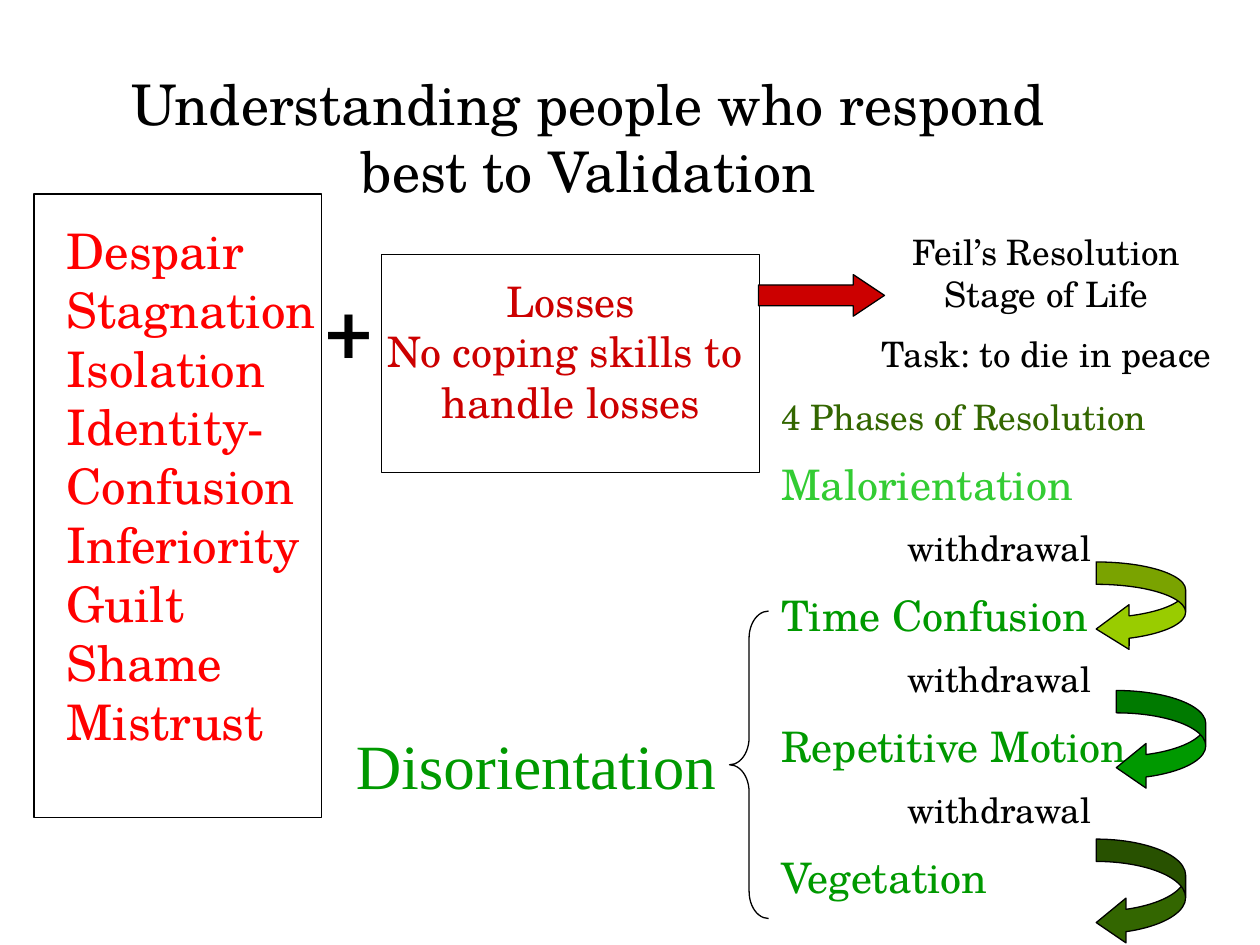
from pptx import Presentation
from pptx.dml.color import RGBColor
from pptx.enum.shapes import MSO_SHAPE as Shape
from pptx.enum.text import MSO_ANCHOR as Anchor, PP_ALIGN as Align
from pptx.util import Emu, Pt

SCALE = 9144
SERIF = "TeX Gyre Schola"
BLACK, RED, CRIMSON = "000000", "FF0000", "CC0000"
LIME, GREEN, OLIVE = "33CC33", "009900", "336600"


def px(length):
    """Turn px, at 100 to the inch, into EMU."""
    return Emu(length * SCALE)


def color(hex_value):
    """Return the colour for a hex string."""
    return RGBColor.from_string(hex_value)


def write(frame, lines, size=20, fill=BLACK, font=SERIF, align=Align.LEFT,
          anchor=Anchor.TOP, wrap=True, spaced=False):
    """Fill a text frame; a line is text or (text, size, colour, indent)."""
    frame.word_wrap, frame.vertical_anchor = wrap, anchor
    for index, line in enumerate(lines):
        text, points, shade, indent = (
            (line, size, fill, 0) if isinstance(line, str) else line)
        paragraph = frame.paragraphs[0] if index == 0 else frame.add_paragraph()
        properties = paragraph._p.get_or_add_pPr()
        properties.set("marL", str(px(indent)))
        properties.set("indent", "0")
        paragraph.alignment = align
        paragraph.space_before = Pt(points / 2 if spaced and index else 0)
        run = paragraph.add_run()
        run.text = text
        run.font.size, run.font.name = Pt(points), font
        run.font.color.rgb = color(shade)


def add_text(slide, box, lines, **format):
    """Add a text box."""
    write(slide.shapes.add_textbox(*map(px, box)).text_frame, lines, **format)


def add_outline(slide, kind, box, fill=None, adjustments=()):
    """Add a thin black-lined preset shape."""
    shape = slide.shapes.add_shape(kind, *map(px, box))
    shape.shadow.inherit = False
    shape.line.color.rgb, shape.line.width = color(BLACK), Pt(0.75)
    if fill:
        shape.fill.solid()
        shape.fill.fore_color.rgb = color(fill)
    else:
        shape.fill.background()
    for index, value in enumerate(adjustments):
        shape.adjustments[index] = value
    return shape


def add_title(slide, box):
    """Place and format the title."""
    title = slide.shapes.title
    title.left, title.top, title.width, title.height = map(px, box)
    write(title.text_frame, ["Understanding people who respond best to Validation"],
          size=32, align=Align.CENTER)


def add_failures(slide, box):
    """Add the framed list of unresolved life tasks."""
    left, top, width, height = box
    failures = ["Despair", "Stagnation", "Isolation", "Identity- Confusion",
                "Inferiority", "Guilt", "Shame", "Mistrust"]
    add_text(slide, (left + 16, top + 16, 220, 434), failures, size=28, fill=RED)
    add_outline(slide, Shape.RECTANGLE, box)


def add_losses(slide, box):
    """Add the losses box with the plus before it and the arrow after it."""
    left, top, width, height = box
    losses = add_outline(slide, Shape.RECTANGLE, box)
    losses.text_frame.margin_bottom = px(25)
    write(losses.text_frame, ["Losses", "No coping skills to ", "handle losses"],
          size=24, fill=CRIMSON, align=Align.CENTER, anchor=Anchor.MIDDLE, wrap=False)
    add_text(slide, (left - 55, top + 16, 58, 90), ["+"], size=48,
             font="Roboto Slab", align=Align.CENTER)
    add_outline(slide, Shape.RIGHT_ARROW, (left + width - 1, top + 16, 100, 33),
                CRIMSON, (0.5, 0.75))


def add_resolution(slide, box):
    """Add the stage of life and its task."""
    add_text(slide, box, ["Feil’s Resolution Stage of Life", "Task: to die in peace"],
             align=Align.CENTER, spaced=True)


def add_phases(slide, box):
    """Add the four phases, the withdrawal arrows and the disorientation brace."""
    left, top, width, height = box
    withdrawal = ("withdrawal", 20, BLACK, 100)
    lines = [("4 Phases of Resolution", 20, OLIVE, 0), ("Malorientation", 24, LIME, 0)]
    for phase in ("Time Confusion", "Repetitive Motion", "Vegetation"):
        lines += [withdrawal, (phase, 24, GREEN, 0)]
    add_text(slide, box, lines, spaced=True)
    add_text(slide, (left - 345, top + 263, 321, 77), ["Disorientation"], size=36,
             fill=GREEN, font="Times New Roman", align=Align.CENTER, wrap=False)
    add_outline(slide, Shape.LEFT_BRACE, (left - 31, top + 176, 31, 244),
                adjustments=(0.694, 0.5))
    for x, y, tall, fill, head in ((260, 137, 71, "99CC00", 0.368),
                                   (276, 239, 79, GREEN, 0.333),
                                   (260, 357, 84, OLIVE, 0.333)):
        add_outline(slide, Shape.CURVED_LEFT_ARROW, (left + x, top + y, 71, tall),
                    fill, (0.25, 0.5, head))


def main():
    """Build the slide."""
    deck = Presentation()
    deck.slide_width, deck.slide_height = px(1000), px(750)
    slide = deck.slides.add_slide(deck.slide_layouts[5])
    add_title(slide, (59, 50, 816, 118))
    add_failures(slide, (27, 154, 228, 495))
    add_losses(slide, (303, 202, 300, 173))
    add_resolution(slide, (681, 178, 299, 128))
    add_phases(slide, (610, 309, 365, 441))
    deck.save("out.pptx")


if __name__ == "__main__":
    main()
